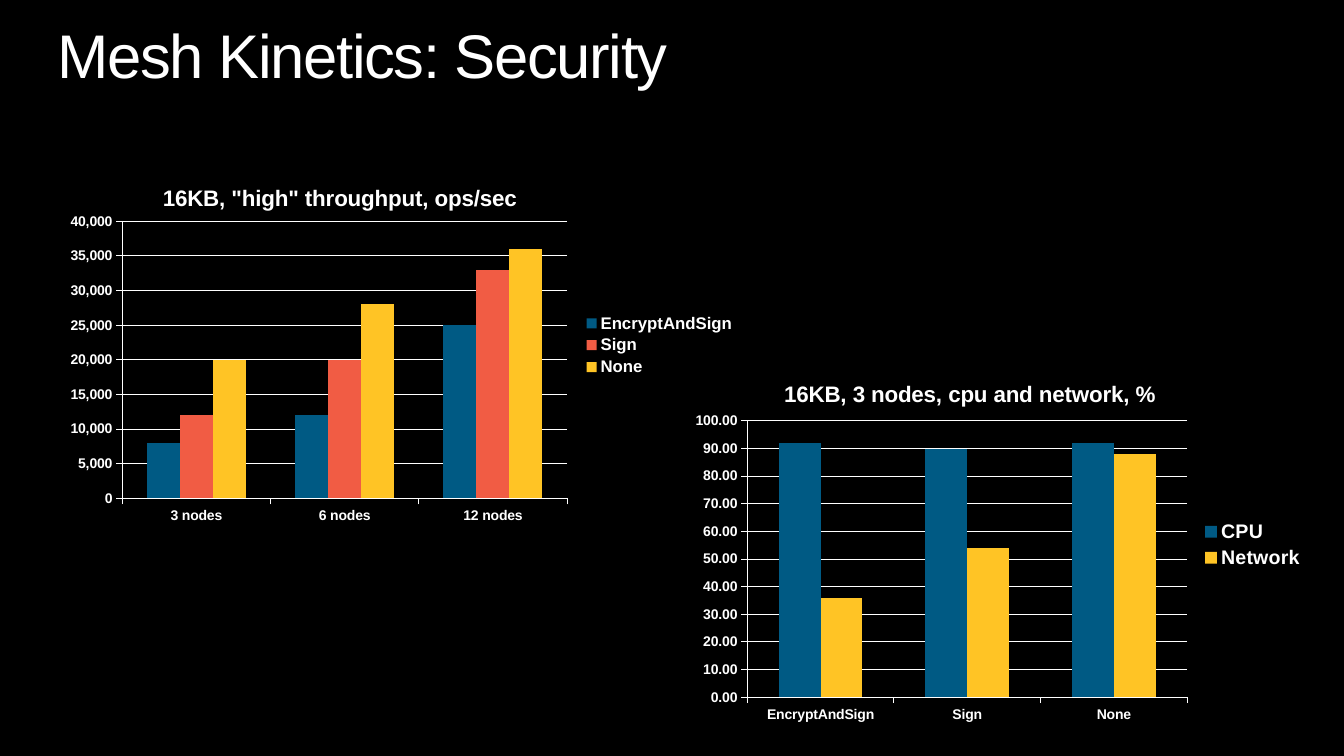
from dataclasses import dataclass

from lxml import etree
from pptx import Presentation, util as u
from pptx.chart.data import CategoryChartData
from pptx.dml.color import RGBColor
from pptx.enum import chart as ch, text
from pptx.oxml.ns import qn

WIDE, HIGH = u.Inches(13.33), u.Inches(7.5)
HUES = {"back": "000000", "text": "FFFFFF", "blue": "005A84",
        "red": "F15C44", "gold": "FFC425"}
FACE = "Arial"


@dataclass
class Series:
    name: str
    vals: tuple
    hue: str


@dataclass
class Graph:
    title: str
    box: tuple      # left, top, width, height as % of the slide
    plot: tuple     # the same, as shares of the chart
    head: tuple     # left, top of the title, as shares of the chart
    cats: tuple
    rows: tuple
    scale: dict
    form: str
    key: int        # legend size in points


GRAPHS = (
    Graph('16KB, "high" throughput, ops/sec',
          (4.28, 21.07, 51.24, 49.2), (0.094, 0.167, 0.646, 0.745),
          (0.147, 0.055), ("3 nodes", "6 nodes", "12 nodes"),
          (Series("EncryptAndSign", (8000, 12000, 25000), "blue"),
           Series("Sign", (12000, 20000, 33000), "red"),
           Series("None", (20000, 28000, 36000), "gold")),
          {"minimum_scale": 0, "maximum_scale": 40000, "major_unit": 5000},
          "#,##0", 12),
    Graph("16KB, 3 nodes, cpu and network, %",
          (50.86, 47.47, 46.96, 49.2), (0.101, 0.167, 0.697, 0.743),
          (0.153, 0.045), ("EncryptAndSign", "Sign", "None"),
          (Series("CPU", (92, 90, 92), "blue"),
           Series("Network", (36, 54, 88), "gold")),
          {"minimum_scale": 0, "maximum_scale": 100, "major_unit": 10},
          "#,##0.00", 14),
)


def paint(hue: str) -> RGBColor:
    return RGBColor.from_string(HUES[hue])


def apply(item, form: dict) -> None:
    for name, value in form.items():
        setattr(item, name, value)


def style(font, size: float, bold: bool) -> None:
    apply(font, {"name": FACE, "size": u.Pt(size), "bold": bold})
    font.color.rgb = paint("text")


def area(box: tuple) -> tuple:
    left, top, wide, high = box
    return tuple(int(size * part / 100) for size, part in
                 ((WIDE, left), (HIGH, top), (WIDE, wide), (HIGH, high)))


def place(node, spot: int, shares: tuple, inner: bool) -> None:
    """Give a chart part a fixed layout."""
    for old in node.findall(qn("c:layout")):
        node.remove(old)
    frame = etree.Element(qn("c:layout"))
    node.insert(spot, frame)
    manual = etree.SubElement(frame, qn("c:manualLayout"))
    pairs = [("layoutTarget", "inner")] if inner else []
    pairs += [("xMode", "edge"), ("yMode", "edge")]
    pairs += list(zip("xywh", shares))
    for tag, value in pairs:
        etree.SubElement(manual, qn(f"c:{tag}")).set("val", str(value))


def heading(slide, words: str) -> None:
    frame = slide.shapes.add_textbox(*area((4.28, 3.33, 91.45, 8.93))).text_frame
    apply(frame, {"word_wrap": True, "margin_left": 0, "margin_right": 0,
                  "margin_top": 0, "margin_bottom": 0,
                  "vertical_anchor": text.MSO_ANCHOR.TOP})
    para = frame.paragraphs[0]
    para.line_spacing = 0.9
    run = para.add_run()
    run.text = words
    style(run.font, 44, False)
    run.font._element.set("spc", "-100")


def draw(slide, graph: Graph) -> None:
    data = CategoryChartData()
    data.categories = graph.cats
    for row in graph.rows:
        data.add_series(row.name, row.vals)
    chart = slide.shapes.add_chart(
        ch.XL_CHART_TYPE.COLUMN_CLUSTERED, *area(graph.box), data).chart
    style(chart.font, 10, False)

    # Title
    chart.has_title = True
    frame = chart.chart_title.text_frame
    frame.text = graph.title
    style(frame.paragraphs[0].runs[0].font, 16, True)
    chart.chart_title.include_in_layout = False
    place(chart.chart_title._element, 1, graph.head, False)

    # Legend
    chart.has_legend = True
    apply(chart.legend, {"position": ch.XL_LEGEND_POSITION.RIGHT,
                         "include_in_layout": False})
    style(chart.legend.font, graph.key, True)

    # Axes
    across, up = chart.category_axis, chart.value_axis
    for axis in (across, up):
        apply(axis, {"major_tick_mark": ch.XL_TICK_MARK.OUTSIDE,
                     "minor_tick_mark": ch.XL_TICK_MARK.NONE})
        style(axis.tick_labels.font, 10, True)
    apply(up, {"has_major_gridlines": True, **graph.scale})
    apply(up.tick_labels, {"number_format": graph.form,
                           "number_format_is_linked": False})
    for line in (across.format.line, up.format.line,
                 up.major_gridlines.format.line):
        line.color.rgb = paint("text")
        line.width = u.Pt(0.75)

    # Columns
    plot = chart.plots[0]
    apply(plot, {"gap_width": 150, "overlap": 0, "vary_by_categories": False})
    for bar, row in zip(plot.series, graph.rows):
        bar.format.fill.solid()
        bar.format.fill.fore_color.rgb = paint(row.hue)
    place(plot._element.getparent(), 0, graph.plot, True)


def main() -> None:
    deck = Presentation()
    apply(deck, {"slide_width": WIDE, "slide_height": HIGH})
    slide = deck.slides.add_slide(deck.slide_layouts[6])
    slide.background.fill.solid()
    slide.background.fill.fore_color.rgb = paint("back")
    heading(slide, "Mesh Kinetics: Security")
    for graph in GRAPHS:
        draw(slide, graph)
    deck.save("out.pptx")


if __name__ == "__main__":
    main()
